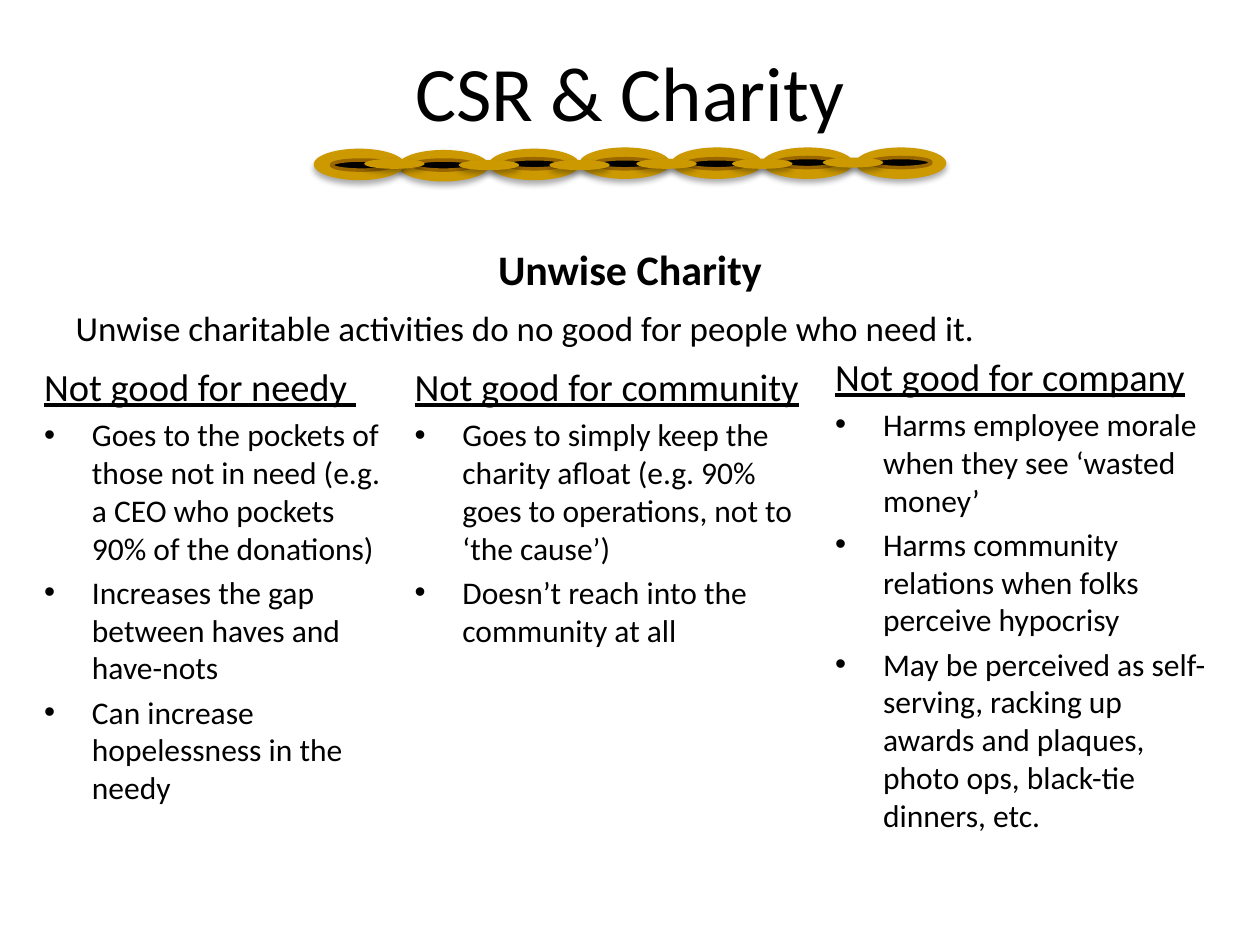
from lxml import etree
from pptx import Presentation
from pptx import util as u
from pptx.dml import color
from pptx.enum import shapes, text
from pptx.oxml import ns

COLUMNS = [
    ("Not good for needy ", (0.25, 2.83, 2.91, 4.5), [
        "Goes to the pockets of those not in need (e.g. a CEO who pockets 90% of the donations)",
        "Increases the gap between haves and have-nots",
        "Can increase hopelessness in the needy"]),
    ("Not good for community", (3.19, 2.83, 3.29, 4.5), [
        "Goes to simply keep the charity afloat (e.g. 90% goes to operations, not to ‘the cause’)",
        "Doesn’t reach into the community at all"]),
    ("Not good for company", (6.53, 2.75, 3.22, 4.58), [
        "Harms employee morale when they see ‘wasted money’",
        "Harms community relations when folks perceive hypocrisy",
        "May be perceived as self-serving, racking up awards and plaques, "
        "photo ops, black-tie dinners, etc."]),
]
LINKS = [(0, 0.01), (0.67, 0.02), (1.39, 0.01), (2.11, 0), (2.84, 0), (3.56, 0), (4.3, 0)]
HOLES = [(0.14, 0.1), (0.79, 0.1), (1.51, 0.09), (2.23, 0.09), (2.96, 0.09), (3.68, 0.08), (4.42, 0.08)]
JOINTS = [(0.4, 0.09), (1.15, 0.1), (1.87, 0.1), (2.56, 0.09), (3.32, 0.09), (4.04, 0.08)]


def rgb(value):
    """Return the colour for a hex string."""
    return color.RGBColor.from_string(value)


def place(shape, box):
    """Move and size a shape to a box given in inches."""
    shape.left, shape.top, shape.width, shape.height = map(u.Inches, box)


def prepare(shape, box, anchor=text.MSO_ANCHOR.TOP):
    """Place a text shape and return its wrapped, unscaled frame."""
    place(shape, box)
    frame = shape.text_frame
    frame.word_wrap = True
    frame.auto_size = text.MSO_AUTO_SIZE.NONE
    frame.vertical_anchor = anchor
    return frame


def write(paragraph, words, size, before=0.2, bold=False, underline=False,
          align=text.PP_ALIGN.LEFT, bullet=False):
    """Write one run into a paragraph, with a hanging bullet if asked."""
    paragraph.alignment = align
    paragraph.space_before = u.Pt(round(size * before, 1))
    properties = paragraph._p.get_or_add_pPr()
    indent = u.Inches(0.38) if bullet else 0
    properties.set("marL", str(indent))
    properties.set("indent", str(-indent))
    if bullet:
        etree.SubElement(properties, ns.qn("a:buFont"), typeface="Arial")
        etree.SubElement(properties, ns.qn("a:buChar"), char="•")
    else:
        etree.SubElement(properties, ns.qn("a:buNone"))
    run = paragraph.add_run()
    run.text = words
    font = run.font
    font.name, font.size, font.bold, font.underline = "Calibri", u.Pt(size), bold, underline
    font.color.rgb = rgb("000000")


def add_column(shape, box, heading, points):
    """Fill one column with an underlined heading and bullet points."""
    frame = prepare(shape, box)
    write(frame.paragraphs[0], heading, 22, underline=True)
    for point in points:
        write(frame.add_paragraph(), point, 18, bullet=True)


def add_ellipse(group, box, fill, line=None):
    """Add an outlined hole, or a solid ring with a soft shadow."""
    shape = group.shapes.add_shape(shapes.MSO_SHAPE.OVAL, *map(u.Inches, box))
    shape.fill.solid()
    shape.fill.fore_color.rgb = rgb(fill)
    shape.shadow.inherit = False
    if line:
        shape.line.color.rgb = rgb(line)
        shape.line.width = u.Pt(2)
        return
    shape.line.fill.background()
    effects = shape._element.spPr.find(ns.qn("a:effectLst"))
    shadow = etree.SubElement(effects, ns.qn("a:outerShdw"), blurRad=str(u.Pt(3.5)),
                              dist=str(u.Pt(2.2)), dir="5400000", rotWithShape="0")
    shade = etree.SubElement(shadow, ns.qn("a:srgbClr"), val="000000")
    etree.SubElement(shade, ns.qn("a:alpha"), val="32000")


def add_chain(slide, left, top):
    """Add the grouped chain of links, holes and joints."""
    group = slide.shapes.add_group_shape()
    parts = [(LINKS, (0.72, 0.25), "CC9900", None),
             (HOLES, (0.48, 0.08), "000000", "996600"),
             (JOINTS, (0.48, 0.08), "CC9900", None)]
    for offsets, size, fill, line in parts:
        for across, down in reversed(offsets):
            add_ellipse(group, (left + across, top + down, *size), fill, line)


def add_header(title, heading, statement):
    """Fill the title, the subject heading and the statement below it."""
    center = text.PP_ALIGN.CENTER
    frame = prepare(title, (0.5, 0.3, 9, 1.25))
    write(frame.paragraphs[0], "CSR & Charity", 44, before=0, align=center)
    frame = prepare(heading, (0.5, 1.68, 9, 0.7), text.MSO_ANCHOR.BOTTOM)
    write(frame.paragraphs[0], "Unwise Charity", 24, bold=True, align=center)
    frame = prepare(statement, (0.5, 2.38, 9, 0.54))
    write(frame.paragraphs[0],
          "Unwise charitable activities do no good for people who need it.", 20)


def main():
    """Build and save the slide."""
    presentation = Presentation()
    presentation.slide_width, presentation.slide_height = u.Inches(10), u.Inches(7.5)
    slide = presentation.slides.add_slide(presentation.slide_layouts[4])
    holders = slide.placeholders
    add_header(slide.shapes.title, holders[1], holders[3])
    add_chain(slide, 2.49, 1.17)
    company = slide.shapes.add_textbox(0, 0, 0, 0)
    for shape, (heading, box, points) in zip((holders[2], holders[4], company), COLUMNS):
        add_column(shape, box, heading, points)
    presentation.save("out.pptx")


if __name__ == "__main__":
    main()
